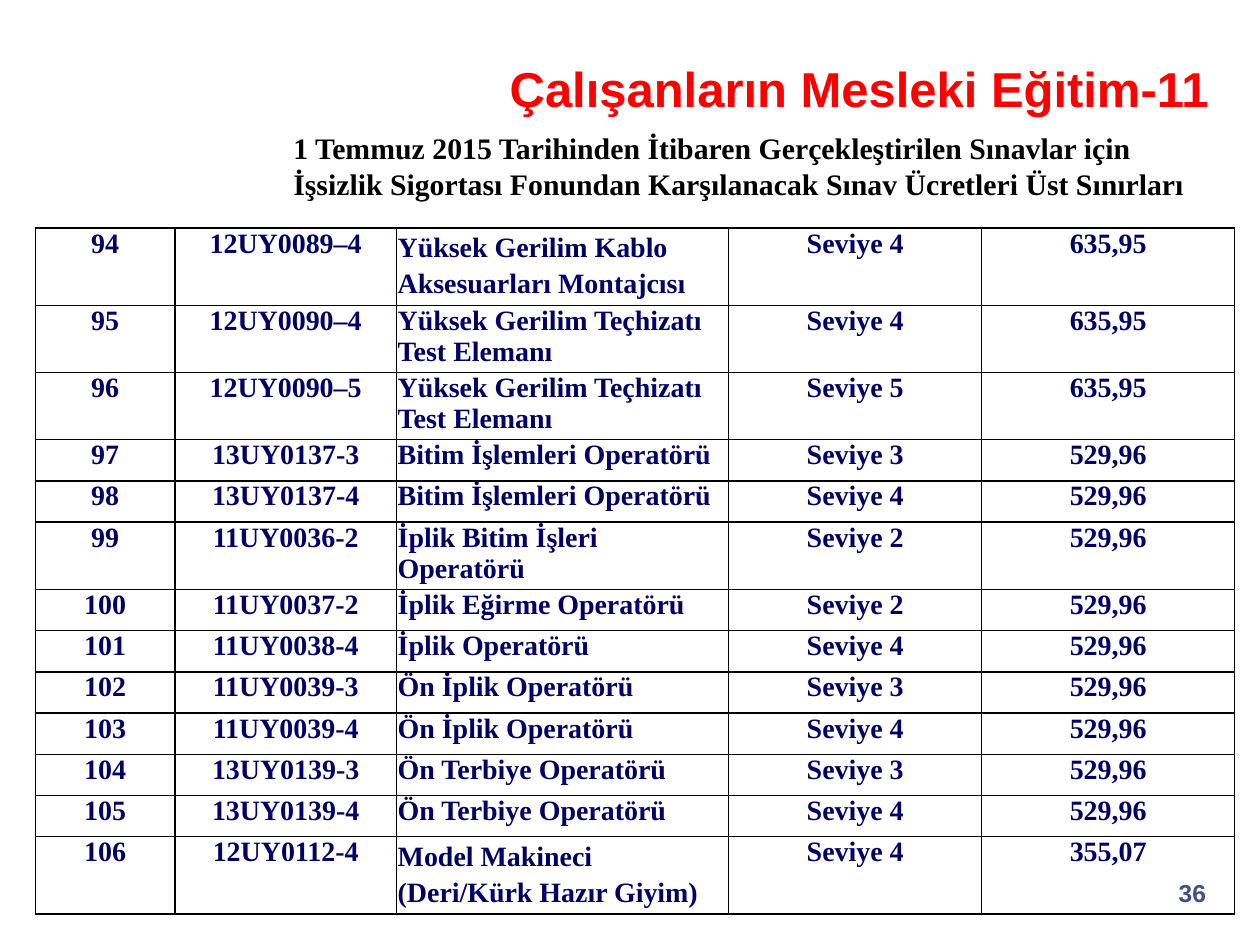
from lxml.etree import SubElement as Sub
from pptx import Presentation
from pptx.dml.color import RGBColor
from pptx.enum.text import MSO_ANCHOR as Anchor, PP_ALIGN as Align
from pptx.oxml.ns import qn
from pptx.util import Inches, Pt

WIDTH, HEIGHT = Inches(10), Inches(7.5)
SANS, SERIF = "Arial", "Times New Roman"
RED, NAVY, SLATE, BLACK = "FF0000", "000066", "3D4E84", "000000"

HEADING = "Çalışanların Mesleki Eğitim-11 "
SUBTITLE = [
    "1 Temmuz 2015 Tarihinden İtibaren Gerçekleştirilen Sınavlar için İşsizlik Sigortası ",
    "Fonundan ",
    "Karşılanacak Sınav Ücretleri Üst Sınırları",
]
FIRST_NUMBER = 94
EXAMS = [
    ("12UY0089–4", "Yüksek Gerilim Kablo Aksesuarları Montajcısı", 4, "635,95"),
    ("12UY0090–4", "Yüksek Gerilim Teçhizatı Test Elemanı", 4, "635,95"),
    ("12UY0090–5", "Yüksek Gerilim Teçhizatı Test Elemanı", 5, "635,95"),
    ("13UY0137-3", "Bitim İşlemleri Operatörü", 3, "529,96"),
    ("13UY0137-4", "Bitim İşlemleri Operatörü", 4, "529,96"),
    ("11UY0036-2", "İplik Bitim İşleri Operatörü", 2, "529,96"),
    ("11UY0037-2", "İplik Eğirme Operatörü", 2, "529,96"),
    ("11UY0038-4", "İplik Operatörü", 4, "529,96"),
    ("11UY0039-3", "Ön İplik Operatörü", 3, "529,96"),
    ("11UY0039-4", "Ön İplik Operatörü", 4, "529,96"),
    ("13UY0139-3", "Ön Terbiye Operatörü", 3, "529,96"),
    ("13UY0139-4", "Ön Terbiye Operatörü", 4, "529,96"),
    ("12UY0112-4", "Model Makineci (Deri/Kürk Hazır Giyim)", 4, "355,07"),
]
COLUMN_WEIGHTS = [1.11, 1.76, 2.64, 2.01, 2.01]
NAME_COLUMN = 2
LOOSE_ROWS = {0, 12}
TWO_LINE_ROWS = {1, 2, 5}
LOOSE_HEIGHT, TWO_LINE_HEIGHT = Inches(0.61), Inches(0.53)


def percent_box(left, top, width, height):
    return (int(WIDTH * left / 100), int(HEIGHT * top / 100),
            int(WIDTH * width / 100), int(HEIGHT * height / 100))


def colour(hex_code):
    return RGBColor.from_string(hex_code)


def write(paragraph, pieces, font_name, size, hex_code, align):
    paragraph.alignment = align
    for piece in pieces:
        run = paragraph.add_run()
        run.text = piece
        run.font.name = font_name
        run.font.size = Pt(size)
        run.font.bold = True
        run.font.color.rgb = colour(hex_code)


def add_heading(slide, box):
    heading = slide.shapes.title
    heading.left, heading.top, heading.width, heading.height = box
    heading.text_frame.vertical_anchor = Anchor.MIDDLE
    write(heading.text_frame.paragraphs[0], [HEADING], SANS, 28, RED, Align.RIGHT)


def add_page_number(slide, box):
    frame = slide.shapes.add_textbox(*box).text_frame
    frame.word_wrap = True
    write(frame.paragraphs[0], ["36"], SANS, 14, SLATE, Align.RIGHT)


def add_subtitle(slide, box):
    frame = slide.shapes.add_textbox(*box).text_frame
    frame.word_wrap = True
    paragraph = frame.paragraphs[0]
    paragraph._p.get_or_add_pPr().set("marL", str(Inches(0.93)))
    write(paragraph, SUBTITLE, SERIF, 17, BLACK, Align.LEFT)


def outline(cell):
    properties = cell._tc.get_or_add_tcPr()
    for side in ("a:lnL", "a:lnR", "a:lnT", "a:lnB"):
        border = Sub(properties, qn(side), w=str(Pt(1)))
        Sub(Sub(border, qn("a:solidFill")), qn("a:srgbClr"), val=BLACK)


def fill_cell(cell, text, is_name, is_loose):
    cell.margin_left = Inches(0.01) if is_name else 0
    cell.margin_right = cell.margin_top = cell.margin_bottom = 0
    cell.vertical_anchor = Anchor.TOP
    outline(cell)
    cell.fill.background()
    paragraph = cell.text_frame.paragraphs[0]
    if is_name and is_loose:
        paragraph.line_spacing = 1.15
    write(paragraph, [text], SERIF, 16, NAVY, Align.LEFT if is_name else Align.CENTER)


def row_heights(total):
    wrapped = len(LOOSE_ROWS) * LOOSE_HEIGHT + len(TWO_LINE_ROWS) * TWO_LINE_HEIGHT
    single = (total - wrapped) // (len(EXAMS) - len(LOOSE_ROWS | TWO_LINE_ROWS))
    return [LOOSE_HEIGHT if r in LOOSE_ROWS else TWO_LINE_HEIGHT if r in TWO_LINE_ROWS else single
            for r in range(len(EXAMS))]


def add_fee_table(slide, box):
    fees = slide.shapes.add_table(len(EXAMS), len(COLUMN_WEIGHTS), *box).table
    fees.first_row = fees.horz_banding = False
    width, height = box[2:]
    for column, weight in zip(fees.columns, COLUMN_WEIGHTS):
        column.width = int(width * weight / sum(COLUMN_WEIGHTS))
    for row, row_height in zip(fees.rows, row_heights(height)):
        row.height = row_height
    for r, (code, name, level, fee) in enumerate(EXAMS):
        texts = [str(FIRST_NUMBER + r), code, name, f"Seviye {level}", fee]
        for c, text in enumerate(texts):
            fill_cell(fees.cell(r, c), text, c == NAME_COLUMN, r in LOOSE_ROWS)


def main():
    deck = Presentation()
    deck.slide_width, deck.slide_height = WIDTH, HEIGHT
    slide = deck.slides.add_slide(deck.slide_layouts[5])
    add_heading(slide, percent_box(33.9, 5.6, 64.1, 7.47))
    add_page_number(slide, percent_box(91, 92.27, 5.7, 6.67))
    add_subtitle(slide, percent_box(13, 13.07, 85, 8.93))
    add_fee_table(slide, percent_box(2.8, 24.13, 95.2, 72.4))
    deck.save("out.pptx")


if __name__ == "__main__":
    main()
